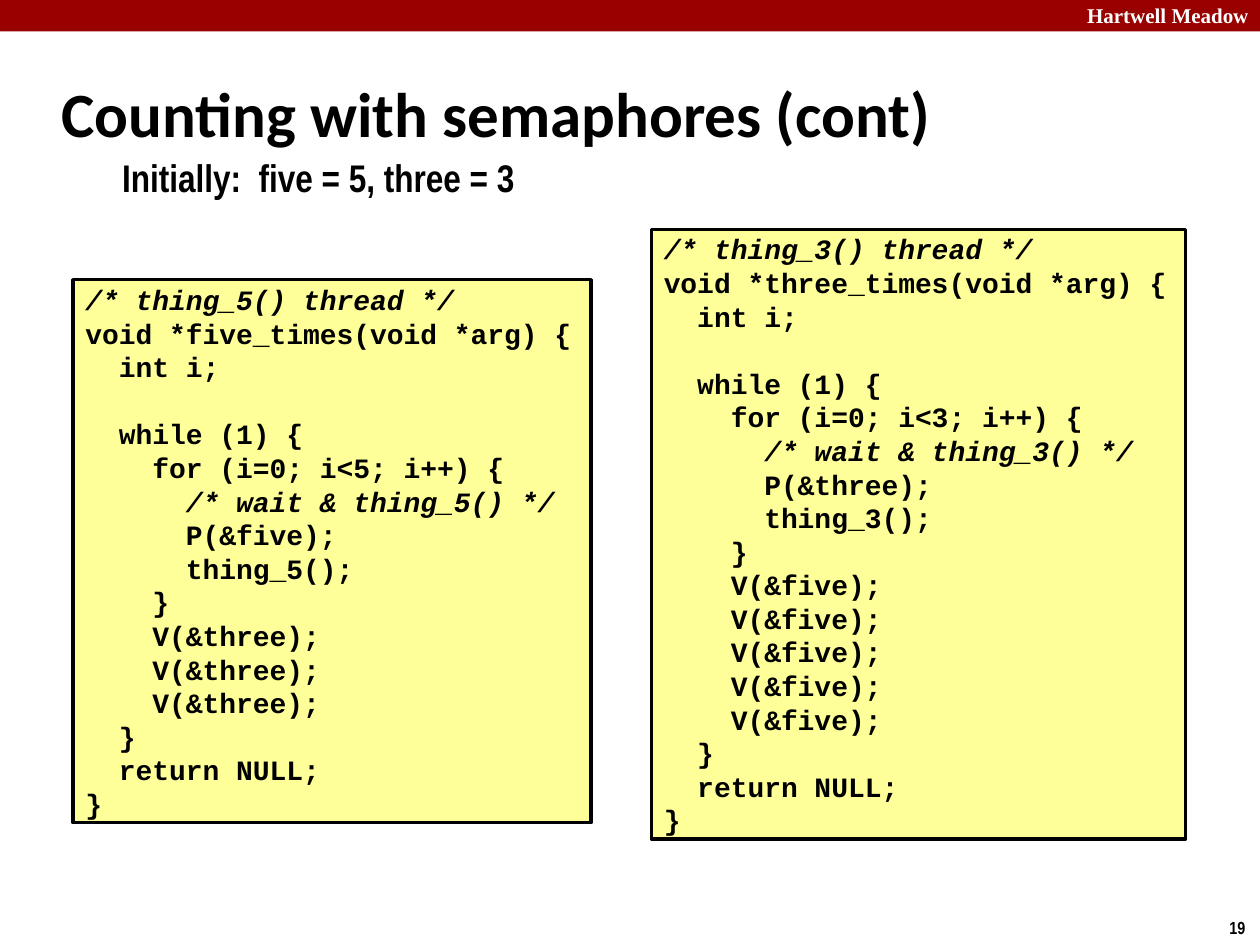
from pptx import Presentation
from pptx import util as u
from pptx.dml.color import RGBColor
from pptx.enum import shapes, text

RED = RGBColor(0x99, 0x00, 0x00)
YELLOW = RGBColor(0xFF, 0xFF, 0x99)
BLACK = RGBColor(0, 0, 0)
WHITE = RGBColor(0xFF, 0xFF, 0xFF)

WIDTH, HEIGHT = 10, 7.5
BAR = (0, 0, WIDTH, 0.25)

# text, box (left, top, width, height), font, size, colour, frame format
TOP, MIDDLE = text.MSO_ANCHOR.TOP, text.MSO_ANCHOR.MIDDLE
ONE_LINE = {"auto_size": text.MSO_AUTO_SIZE.SHAPE_TO_FIT_TEXT,
            "word_wrap": False, "vertical_anchor": TOP}
TIGHT = {**ONE_LINE, "vertical_anchor": MIDDLE, "margin_top": 0, "margin_bottom": 0}
LABELS = [
    ("Hartwell Meadow", (8.53, -0.03, 1.49, 0.3), "Times New Roman", 12, WHITE, ONE_LINE),
    ("19", (9.66, 7.23, 0.34, 0.27), "Arial Narrow", 10, BLACK, ONE_LINE),
    ("Counting with semaphores (cont)", (0.39, 0.48, 8.3, 0.83), "Calibri", 36, BLACK,
     {"word_wrap": True, "vertical_anchor": MIDDLE}),
    ("Initially:  five = 5, three = 3", (0.87, 1.22, 3.35, 0.37), "Arial Narrow", 22,
     BLACK, TIGHT),
]

CODE_START = """/* thing_{n}() thread */
void *{own}_times(void *arg) {{
  int i;

  while (1) {{
    for (i=0; i<{n}; i++) {{
      /* wait & thing_{n}() */
      P(&{own});
      thing_{n}();
    }}"""
CODE_SIGNAL = "    V(&{other});"
CODE_END = """  }}
  return NULL;
}}"""

# own semaphore, its count, other semaphore, its count, box
THREADS = [
    ("five", 5, "three", 3, (0.58, 2.22, 4.11, 4.31)),
    ("three", 3, "five", 5, (5.17, 1.82, 4.24, 4.84)),
]


def inches(box):
    return [u.Inches(v) for v in box]


def add_rect(slide, box, fill):
    sp = slide.shapes.add_shape(shapes.MSO_SHAPE.RECTANGLE, *inches(box))
    sp.shadow.inherit = False
    sp.fill.solid()
    sp.fill.fore_color.rgb = fill
    sp.line.fill.background()
    return sp


def write(sp, lines, font, size, color, frame):
    """Fill a shape with bold lines; code comments are italic."""
    tf = sp.text_frame
    for name, value in frame.items():
        setattr(tf, name, value)
    for i, line in enumerate(lines):
        p = tf.add_paragraph() if i else tf.paragraphs[0]
        p.alignment = text.PP_ALIGN.LEFT
        style = {"name": font, "size": u.Pt(size), "bold": True,
                 "italic": line.lstrip().startswith("/*")}
        f = p.font
        if line:
            r = p.add_run()
            r.text = line
            f = r.font
            f.color.rgb = color
        for name, value in style.items():
            setattr(f, name, value)


def thread_code(own, n, other, signals):
    code = "\n".join([CODE_START] + [CODE_SIGNAL] * signals + [CODE_END])
    return code.format(own=own, n=n, other=other).split("\n")


def main():
    prs = Presentation()
    prs.slide_width, prs.slide_height = u.Inches(WIDTH), u.Inches(HEIGHT)
    slide = prs.slides.add_slide(prs.slide_layouts[6])

    add_rect(slide, BAR, RED)
    for label, box, font, size, color, frame in LABELS:
        sp = slide.shapes.add_textbox(*inches(box))
        write(sp, [label], font, size, color, frame)
    for *thread, box in THREADS:
        sp = add_rect(slide, box, YELLOW)
        sp.line.color.rgb = BLACK
        sp.line.width = u.Pt(2)
        write(sp, thread_code(*thread), "Courier New", 16, BLACK, TIGHT)

    prs.save("out.pptx")


if __name__ == "__main__":
    main()
